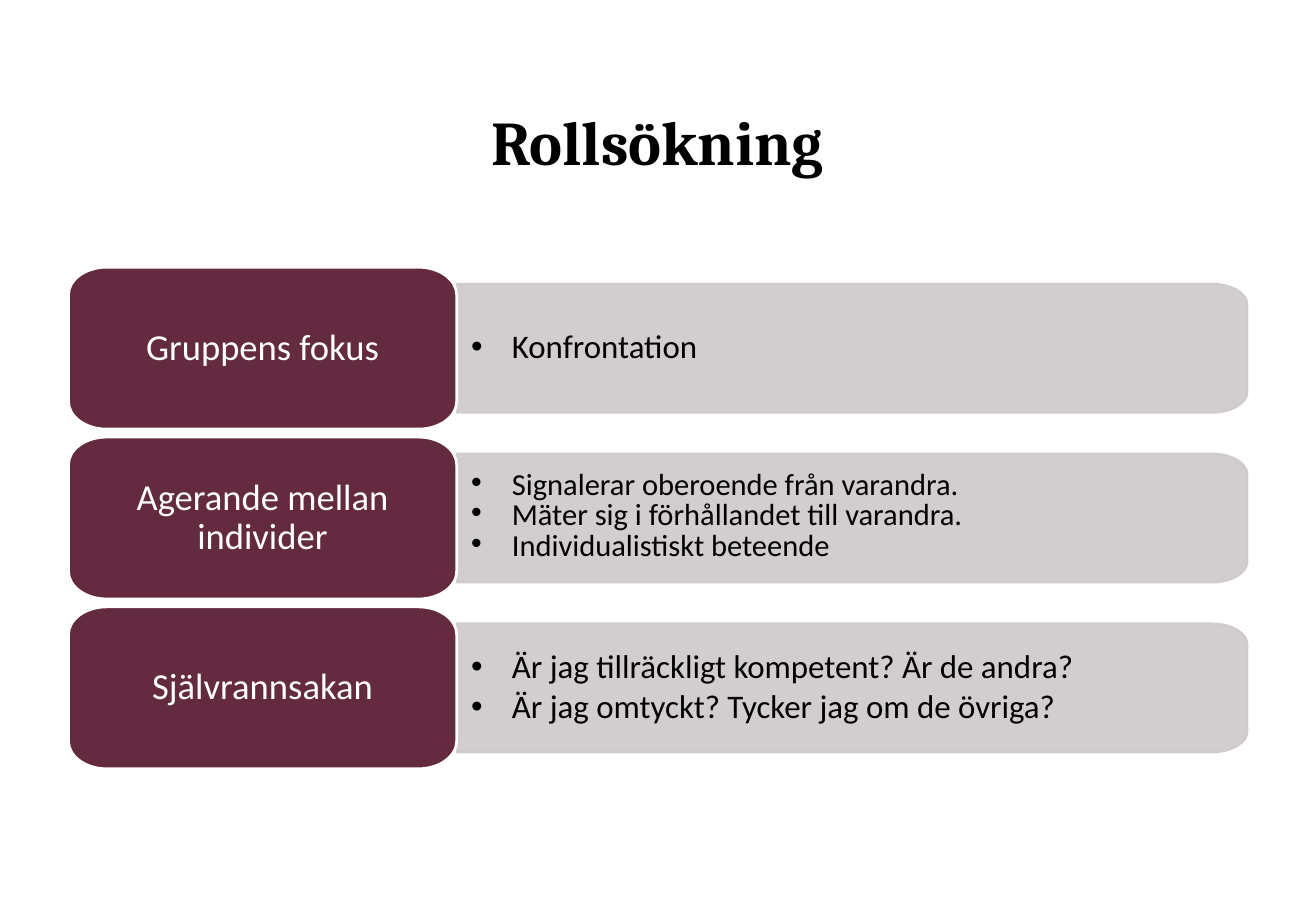
from dataclasses import dataclass

from lxml.etree import SubElement
from pptx import Presentation
from pptx.dml.color import RGBColor
from pptx.enum.text import MSO_ANCHOR, MSO_AUTO_SIZE, PP_ALIGN
from pptx.oxml.ns import qn
from pptx.shapes.autoshape import Shape
from pptx.slide import Slide
from pptx.util import Inches, Pt

WINE = RGBColor(0x64, 0x2A, 0x3F)
GREY = RGBColor(0xCE, 0xC8, 0xCA)
WHITE = RGBColor(0xFF, 0xFF, 0xFF)
BLACK = RGBColor(0x00, 0x00, 0x00)

LEFT, SPLIT, RIGHT = 0.52, 3.47, 9.48
FIRST_ROW, ROW_PITCH = 2.03, 1.29
LABEL_HEIGHT, BAR_HEIGHT = 1.23, 0.98
BULLET_INDENT = 0.31
CURVE = 0.55


@dataclass
class Row:
    label: str
    points: list[str]
    size: float = 18
    spacing: float = 0.9
    gap: float = 2.3


@dataclass
class Panel:
    left: float
    top: float
    width: float
    height: float
    radius_x: float
    radius_y: float
    square_left: bool
    fill: RGBColor
    line: RGBColor
    line_width: float
    insets: tuple[float, float, float, float]


ROWS = [
    Row("Gruppens fokus", ["Konfrontation"]),
    Row("Agerande mellan individer",
        ["Signalerar oberoende från varandra.",
         "Mäter sig i förhållandet till varandra.",
         "Individualistiskt beteende"], 16.7, 0.7, 2.7),
    Row("Självrannsakan",
        ["Är jag tillräckligt kompetent? Är de andra?",
         "Är jag omtyckt? Tycker jag om de övriga?"]),
]


def set_all(target: object, values: dict) -> None:
    for name, value in values.items():
        setattr(target, name, value)


def corner_points(panel: Panel) -> list[tuple[float, float]]:
    points = []
    for side_x, side_y in [(1, 1), (0, 1), (0, 0), (1, 0)]:
        square = panel.square_left and side_x == 0
        x, y = side_x * panel.width, side_y * panel.height
        inner_x = x if square else x + (1 - 2 * side_x) * panel.radius_x
        inner_y = y if square else y + (1 - 2 * side_y) * panel.radius_y
        ends = [(x, inner_y), (inner_x, y)]
        points += ends if side_x == side_y else ends[::-1]
    return points


def round_corners(shape: Shape, points: list[tuple[float, float]], panel: Panel) -> None:
    segments = list(shape._element.spPr.iter(qn("a:lnTo")))
    for index in range(0, len(points), 2):
        start, end = points[index], points[index + 1]
        if start == end:
            continue
        corner = (panel.width if index in (0, 6) else 0,
                  panel.height if index < 4 else 0)
        controls = [tuple(a + CURVE * (b - a) for a, b in zip(point, corner))
                    for point in (start, end)]
        line = segments[index]
        curve = SubElement(line.getparent(), qn("a:cubicBezTo"))
        for x, y in (*controls, end):
            SubElement(curve, qn("a:pt"), x=str(Inches(x)), y=str(Inches(y)))
        line.getparent().replace(line, curve)


def draw_panel(page: Slide, panel: Panel) -> Shape:
    points = corner_points(panel)
    first, *others = [(Inches(x), Inches(y)) for x, y in points]
    builder = page.shapes.build_freeform(*first, scale=1.0)
    builder.add_line_segments(others, close=True)
    shape = builder.convert_to_shape(Inches(panel.left), Inches(panel.top))
    round_corners(shape, points, panel)
    shape.shadow.inherit = False
    shape.fill.solid()
    shape.fill.fore_color.rgb = panel.fill
    shape.line.color.rgb = panel.line
    shape.line.width = Pt(panel.line_width)
    left, top, right, bottom = map(Inches, panel.insets)
    set_all(shape.text_frame, {
        "word_wrap": True, "vertical_anchor": MSO_ANCHOR.MIDDLE,
        "margin_left": left, "margin_top": top,
        "margin_right": right, "margin_bottom": bottom})
    return shape


def write(box: Shape, lines: list[str], font: dict, color: RGBColor,
          layout: dict, bulleted: bool = False) -> None:
    frame = box.text_frame
    for index, line in enumerate(lines):
        para = frame.add_paragraph() if index else frame.paragraphs[0]
        set_all(para, layout)
        if bulleted:
            properties = para._p.get_or_add_pPr()
            properties.set("marL", str(Inches(BULLET_INDENT)))
            properties.set("indent", str(-Inches(BULLET_INDENT)))
            SubElement(properties, qn("a:buFont")).set("typeface", "Arial")
            SubElement(properties, qn("a:buChar")).set("char", "•")
        span = para.add_run()
        span.text = line
        set_all(span.font, font)
        span.font.color.rgb = color


def draw_row(page: Slide, row: Row, top: float) -> None:
    bar = draw_panel(page, Panel(
        SPLIT, top + (LABEL_HEIGHT - BAR_HEIGHT) / 2, RIGHT - SPLIT, BAR_HEIGHT,
        0.27, 0.16, True, GREY, GREY, 1, (0.11, 0.11, 0.17, 0.11)))
    for color in bar._element.spPr.iter(qn("a:srgbClr")):
        SubElement(color, qn("a:alpha")).set("val", "90000")
    write(bar, row.points, {"name": "Calibri", "size": Pt(row.size)}, BLACK,
          {"level": 1, "alignment": PP_ALIGN.LEFT, "line_spacing": row.spacing,
           "space_after": Pt(row.gap)}, bulleted=True)

    label = draw_panel(page, Panel(
        LEFT, top, SPLIT - LEFT, LABEL_HEIGHT,
        0.29, 0.21, False, WINE, WHITE, 1.5, (0.29, 0.18, 0.29, 0.18)))
    write(label, [row.label], {"name": "Calibri", "size": Pt(20)}, WHITE,
          {"alignment": PP_ALIGN.CENTER, "line_spacing": 0.9})


def draw_title(page: Slide, text: str) -> None:
    title = page.shapes.title
    set_all(title, {"left": Inches(3.11), "top": Inches(0.8),
                    "width": Inches(3.77), "height": Inches(0.9)})
    set_all(title.text_frame, {"word_wrap": True, "auto_size": MSO_AUTO_SIZE.NONE,
                               "vertical_anchor": MSO_ANCHOR.TOP})
    write(title, [text], {"name": "Cambria", "size": Pt(34), "bold": True}, BLACK,
          {"alignment": PP_ALIGN.CENTER, "line_spacing": 0.9})


def main() -> None:
    deck = Presentation()
    set_all(deck, {"slide_width": Inches(10), "slide_height": Inches(6.95)})
    page = deck.slides.add_slide(deck.slide_layouts[5])
    draw_title(page, "Rollsökning")
    for index, row in enumerate(ROWS):
        draw_row(page, row, FIRST_ROW + index * ROW_PITCH)
    deck.save("out.pptx")


if __name__ == "__main__":
    main()
